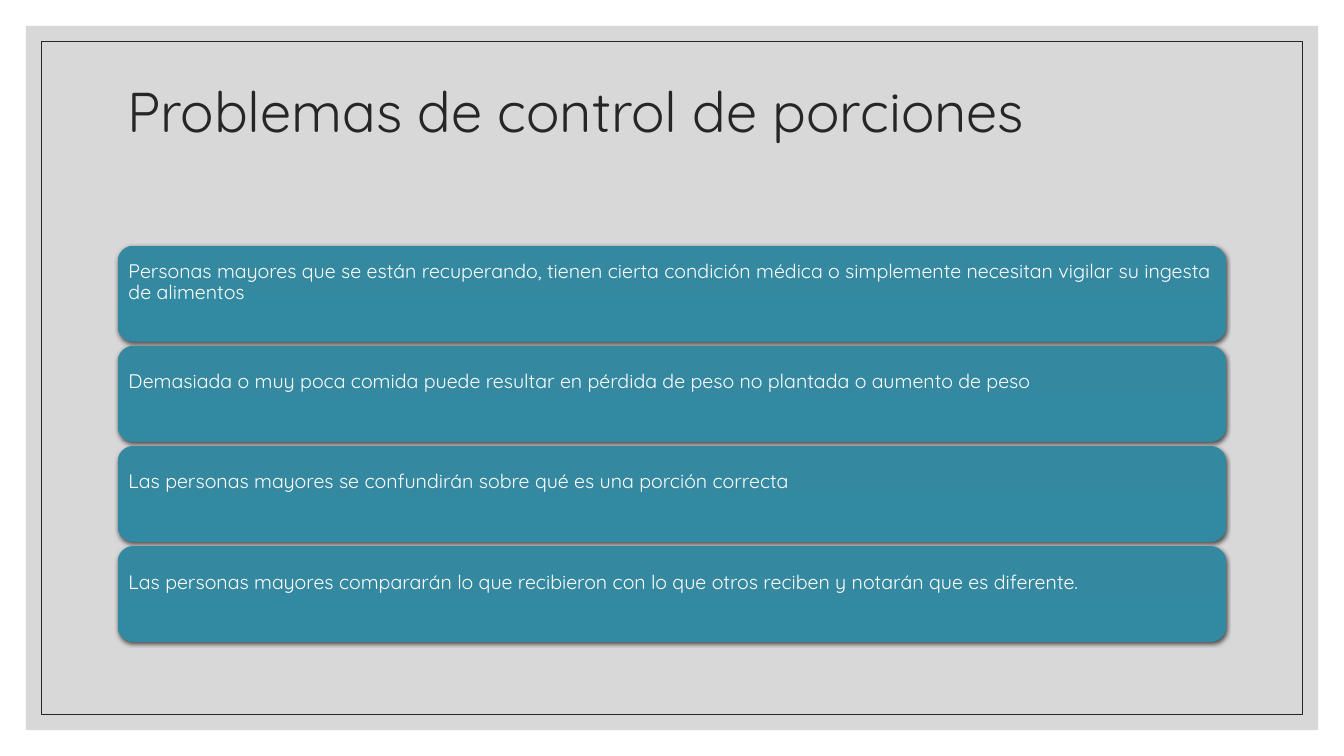
from dataclasses import dataclass

from pptx import Presentation
from pptx import util as u
from pptx.dml.color import RGBColor
from pptx.enum import shapes, text
from pptx.oxml import ns, parse_xml

PX = 6350  # 144 px to the inch
PAGE_W, PAGE_H = 1920, 1080


@dataclass(frozen=True)
class Theme:
    font: str = "Quicksand"
    ink: str = "262626"
    panel: str = "BFBFBF"
    panel_opacity: int = 60
    card_text: str = "FFFFFF"
    card_stops: tuple = ((0, "3488A0"), (50, "3189A2"), (100, "3188A1"))
    shadow: str = "000000"
    shadow_opacity: int = 63
    title_size: int = 40
    card_size: int = 14
    line_spacing: float = 0.9


def px(length):
    return u.Emu(length * PX)


def xml(markup):
    return parse_xml(markup.replace(">", f" {ns.nsdecls('a')}>", 1))


def colour_xml(colour, opacity=100):
    return f'<a:srgbClr val="{colour}"><a:alpha val="{opacity * 1000}"/></a:srgbClr>'


def write(shape, wording, *, font, size, colour, line_spacing, insets):
    """Fill a shape with one left-aligned paragraph, centred between its insets."""
    frame = shape.text_frame
    frame.word_wrap = True
    frame.vertical_anchor = text.MSO_ANCHOR.MIDDLE
    (frame.margin_left, frame.margin_top,
     frame.margin_right, frame.margin_bottom) = map(px, insets)
    para = frame.paragraphs[0]
    para.alignment = text.PP_ALIGN.LEFT
    para.line_spacing = line_spacing
    span = para.add_run()
    span.text = wording
    span.font.name = font
    span.font.size = u.Pt(size)
    span.font.color.rgb = RGBColor.from_string(colour)


class Slide:
    def __init__(self, deck, theme):
        self.theme = theme
        self.page = deck.slides.add_slide(deck.slide_layouts[6])

    def shape(self, kind, *bounds):
        shape = self.page.shapes.add_shape(kind, *map(px, bounds))
        shape.shadow.inherit = False
        shape.line.fill.background()
        return shape

    def inset_rectangle(self, margin):
        return self.shape(shapes.MSO_SHAPE.RECTANGLE, margin, margin,
                          PAGE_W - 2 * margin, PAGE_H - 2 * margin)

    def panel(self, margin):
        panel = self.inset_rectangle(margin)
        panel.fill.solid()
        panel.fill.fore_color.rgb = RGBColor.from_string(self.theme.panel)
        colour = panel.fill._xPr.find(".//" + ns.qn("a:srgbClr"))
        colour.append(xml(f'<a:alpha val="{self.theme.panel_opacity * 1000}"></a:alpha>'))

    def border(self, margin):
        border = self.inset_rectangle(margin)
        border.fill.background()
        border.line.color.rgb = RGBColor.from_string(self.theme.ink)
        border.line.width = u.Pt(0.5)

    def title(self, wording, *bounds):
        box = self.page.shapes.add_textbox(*map(px, bounds))
        write(box, wording, font=self.theme.font, size=self.theme.title_size,
              colour=self.theme.ink, line_spacing=self.theme.line_spacing,
              insets=(14, 7, 14, 97))

    def card(self, wording, *bounds):
        theme = self.theme
        card = self.shape(shapes.MSO_SHAPE.ROUNDED_RECTANGLE, *bounds)
        card.fill.gradient()
        card.fill.gradient_angle = 270
        properties = card._element.spPr

        # Three-stop gradient
        stops = properties.find(".//" + ns.qn("a:gsLst"))
        for stop in list(stops):
            stops.remove(stop)
        for position, colour in theme.card_stops:
            stops.append(xml(f'<a:gs pos="{position * 1000}">{colour_xml(colour)}</a:gs>'))

        # Soft shadow below
        properties.find(ns.qn("a:effectLst")).append(xml(
            f'<a:outerShdw blurRad="{u.Pt(3)}" dist="{u.Pt(1)}" dir="5400000" rotWithShape="0">'
            f'{colour_xml(theme.shadow, theme.shadow_opacity)}</a:outerShdw>'))

        write(card, wording, font=theme.font, size=theme.card_size,
              colour=theme.card_text, line_spacing=theme.line_spacing,
              insets=(9, 9, 9, 41))


def main():
    deck = Presentation()
    deck.slide_width, deck.slide_height = px(PAGE_W), px(PAGE_H)
    slide = Slide(deck, Theme())

    # Background panel and border
    slide.panel(37)
    slide.border(59)

    # Title
    left, width = 168, 1584
    slide.title("Problemas de control de porciones", left, 101, width, 216)

    # Stack of cards
    problems = (
        "Personas mayores que se están recuperando, tienen cierta condición médica "
        "o simplemente necesitan vigilar su ingesta de alimentos",
        "Demasiada o muy poca comida puede resultar en pérdida de peso no plantada "
        "o aumento de peso",
        "Las personas mayores se confundirán sobre qué es una porción correcta",
        "Las personas mayores compararán lo que recibieron con lo que otros reciben "
        "y notarán que es diferente.",
    )
    top, height, gap = 351, 137, 6
    for row, problem in enumerate(problems):
        slide.card(problem, left, top + row * (height + gap), width, height)

    deck.save("out.pptx")


if __name__ == "__main__":
    main()
